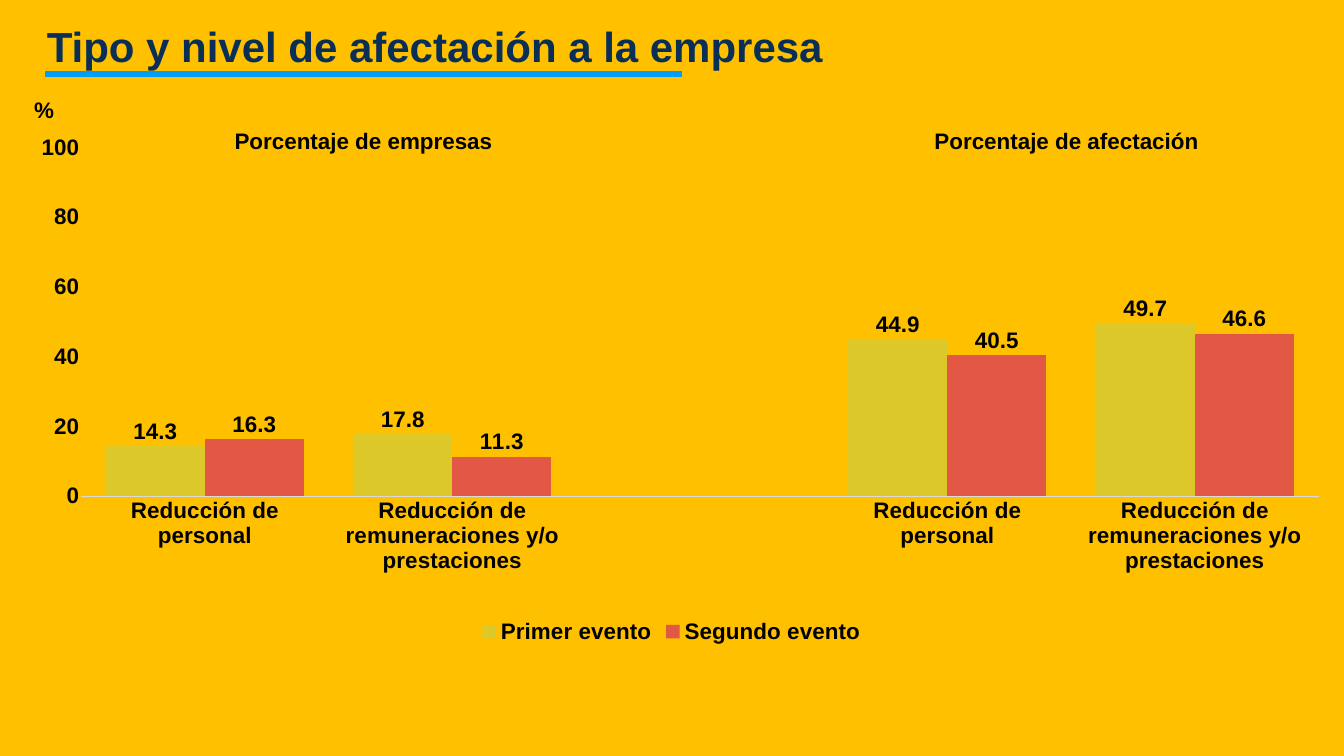
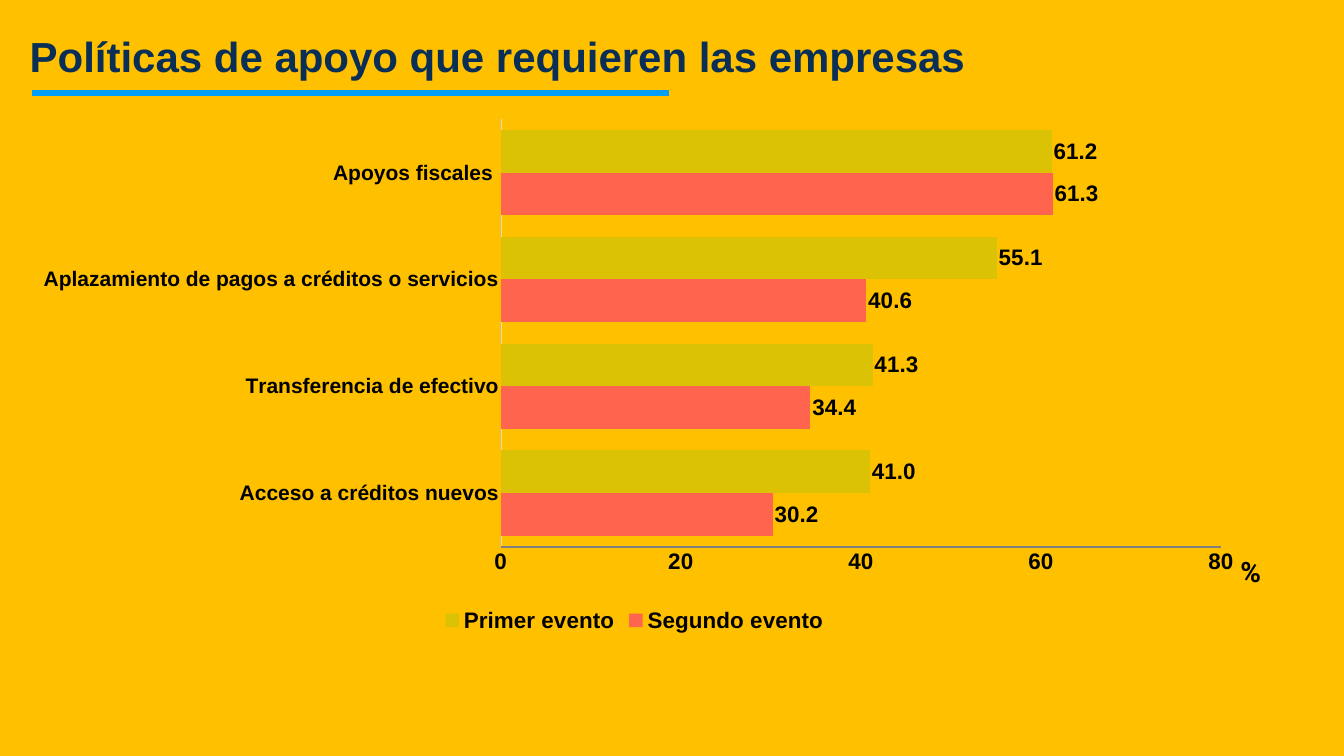
from lxml.etree import SubElement
from pptx import Presentation
from pptx.chart.data import CategoryChartData
from pptx.dml.color import RGBColor
from pptx.enum.chart import (XL_CHART_TYPE as CT, XL_LABEL_POSITION as LABEL,
                             XL_LEGEND_POSITION as LEGEND, XL_TICK_MARK as TICK)
from pptx.enum.shapes import MSO_CONNECTOR
from pptx.enum.text import (MSO_ANCHOR as ANCHOR, MSO_AUTO_SIZE as AUTO,
                            PP_ALIGN as ALIGN)
from pptx.oxml import parse_xml
from pptx.oxml.ns import nsdecls, qn
from pptx.util import Emu, Pt

EMU_PER_PX = 9144  # 100 px to the inch
COLORS = {
    "back": "FFC000", "title": "092F57", "rule": "009EF9", "text": "000000",
    "axis": "D9D9D9", "scale": "808080",
    "first": "DDC82A", "second": "E25844",
    "first_bar": "DCC205", "second_bar": "FF644E",
}


def px(n):
    return Emu(n * EMU_PER_PX)


def rgb(name):
    return RGBColor.from_string(COLORS[name])


class Deck:
    font = "Arial"
    size = 32
    rule_width = 1265

    def __init__(self, width, height):
        self.prs = Presentation()
        self.prs.slide_width, self.prs.slide_height = px(width), px(height)

    def new_slide(self):
        self.slide = self.prs.slides.add_slide(self.prs.slide_layouts[6])
        fill = self.slide.background.fill
        fill.solid()
        fill.fore_color.rgb = rgb("back")

    def style(self, font, size=None, color="text", name=None):
        font.name, font.size, font.bold = name or self.font, Pt(size or self.size), True
        font.color.rgb = rgb(color)

    def text(self, box, text, inset=6, align=ALIGN.CENTER, anchor=ANCHOR.MIDDLE,
             auto=AUTO.SHAPE_TO_FIT_TEXT, **style):
        sp = self.slide.shapes.add_textbox(*map(px, box))
        tf = sp.text_frame
        tf.word_wrap, tf.auto_size, tf.vertical_anchor = True, auto, anchor
        tf.margin_left = tf.margin_right = tf.margin_top = tf.margin_bottom = px(inset)
        p = tf.paragraphs[0]
        p.alignment = align
        r = p.add_run()
        r.text = text
        self.style(r.font, **style)
        return sp

    def title(self, box, text, rule_x, rule_y):
        sp = self.text(box, text, inset=5, align=ALIGN.LEFT, anchor=ANCHOR.TOP,
                       auto=AUTO.NONE, size=60, color="title")
        sp.text_frame.margin_top = px(13)
        self.line(rule_x, rule_y, rule_x + self.rule_width, rule_y)

    def line(self, x1, y1, x2, y2):
        cx = self.slide.shapes.add_connector(MSO_CONNECTOR.STRAIGHT,
                                             *map(px, (x1, y1, x2, y2)))
        cx.line.color.rgb, cx.line.width = rgb("rule"), Pt(9)
        SubElement(cx._element.spPr, qn("a:effectLst"))

    def chart(self, kind, box, cats, series, plot_area, top, axis_format,
              label_format, cat_size=None, scale_line=None):
        data = CategoryChartData(number_format="0.0")
        data.categories = cats
        for name, values, _ in series:
            data.add_series(name, values)
        chart = self.slide.shapes.add_chart(kind, *map(px, box), data).chart
        self.style(chart.font)
        chart.has_title = False
        chart.has_legend = True
        chart.legend.position = LEGEND.BOTTOM
        chart.legend.include_in_layout = False
        self.style(chart.legend.font)

        # Axes
        cat, val = chart.category_axis, chart.value_axis
        for axis, size in ((cat, cat_size), (val, None)):
            axis.has_major_gridlines = False
            axis.major_tick_mark = axis.minor_tick_mark = TICK.NONE
            self.style(axis.tick_labels.font, size)
        cat.format.line.color.rgb, cat.format.line.width = rgb("axis"), Pt(0.75)
        val.minimum_scale, val.maximum_scale, val.major_unit = 0, top, 20
        val.tick_labels.number_format = axis_format
        val.tick_labels.number_format_is_linked = False
        if scale_line:
            val.format.line.color.rgb, val.format.line.width = rgb(scale_line), Pt(3)
        else:
            val.format.line.fill.background()

        # Bars and their labels
        plot = chart.plots[0]
        plot.gap_width, plot.overlap, plot.vary_by_categories = 50, 0, False
        for bar, (_, _, color) in zip(plot.series, series):
            bar.format.fill.solid()
            bar.format.fill.fore_color.rgb = rgb(color)
            bar.invert_if_negative = False
            labels = bar.data_labels
            labels.show_value, labels.position = True, LABEL.OUTSIDE_END
            labels.number_format = label_format
            labels.number_format_is_linked = False
            self.style(labels.font)
        self.place_plot(chart, plot_area)

    def place_plot(self, chart, plot_area):
        area = chart._chartSpace.chart.plotArea
        for old in area.findall(qn("c:layout")):
            area.remove(old)
        modes = '<c:xMode val="edge"/><c:yMode val="edge"/>'
        sizes = "".join(f'<c:{k} val="{v}"/>' for k, v in zip("xywh", plot_area))
        area.insert(0, parse_xml(
            f'<c:layout {nsdecls("c")}><c:manualLayout><c:layoutTarget val="inner"/>'
            f'{modes}{sizes}</c:manualLayout></c:layout>'))


def impact_slide(deck):
    deck.new_slide()
    deck.title((88, 27, 2434, 87), "Tipo y nivel de afectación a la empresa", 89, 147)
    deck.text((48, 185, 79, 65), "%")
    reductions = ["Reducción de personal",
                  "Reducción de remuneraciones y/o prestaciones"]
    deck.chart(
        CT.COLUMN_CLUSTERED, (48, 250, 2569, 1037),
        reductions + [""] + reductions,
        [("Primer evento", (14.3, 17.8, None, 44.9, 49.7), "first"),
         ("Segundo evento", (16.3, 11.3, None, 40.5, 46.6), "second")],
        plot_area=(0.045, 0.041, 0.956, 0.667), top=100,
        axis_format="0", label_format="0.0")
    deck.text((243, 247, 957, 65), "Porcentaje de empresas")
    deck.text((1638, 246, 957, 65), "Porcentaje de afectación")


def support_slide(deck):
    deck.new_slide()
    deck.text((2451, 1095, 62, 79), "%", size=40, name="Roboto")
    deck.chart(
        CT.BAR_CLUSTERED, (54, 222, 2422, 1043),
        ["Acceso a créditos nuevos", "Transferencia de efectivo",
         "Aplazamiento de pagos a créditos o servicios", "Apoyos fiscales "],
        [("Segundo evento ", (30.2, 34.4, 40.6, 61.3), "second_bar"),
         ("Primer evento", (41, 41.3, 55.1, 61.2), "first_bar")],
        plot_area=(0.388, 0.014, 0.59, 0.813), top=80,
        axis_format="#,##0", label_format="##0.0",
        cat_size=30, scale_line="scale")
    deck.title((54, 48, 2318, 79), "Políticas de apoyo que requieren las empresas", 63, 184)


def main():
    deck = Deck(2667, 1500)
    impact_slide(deck)
    support_slide(deck)
    deck.prs.save("out.pptx")


if __name__ == "__main__":
    main()
